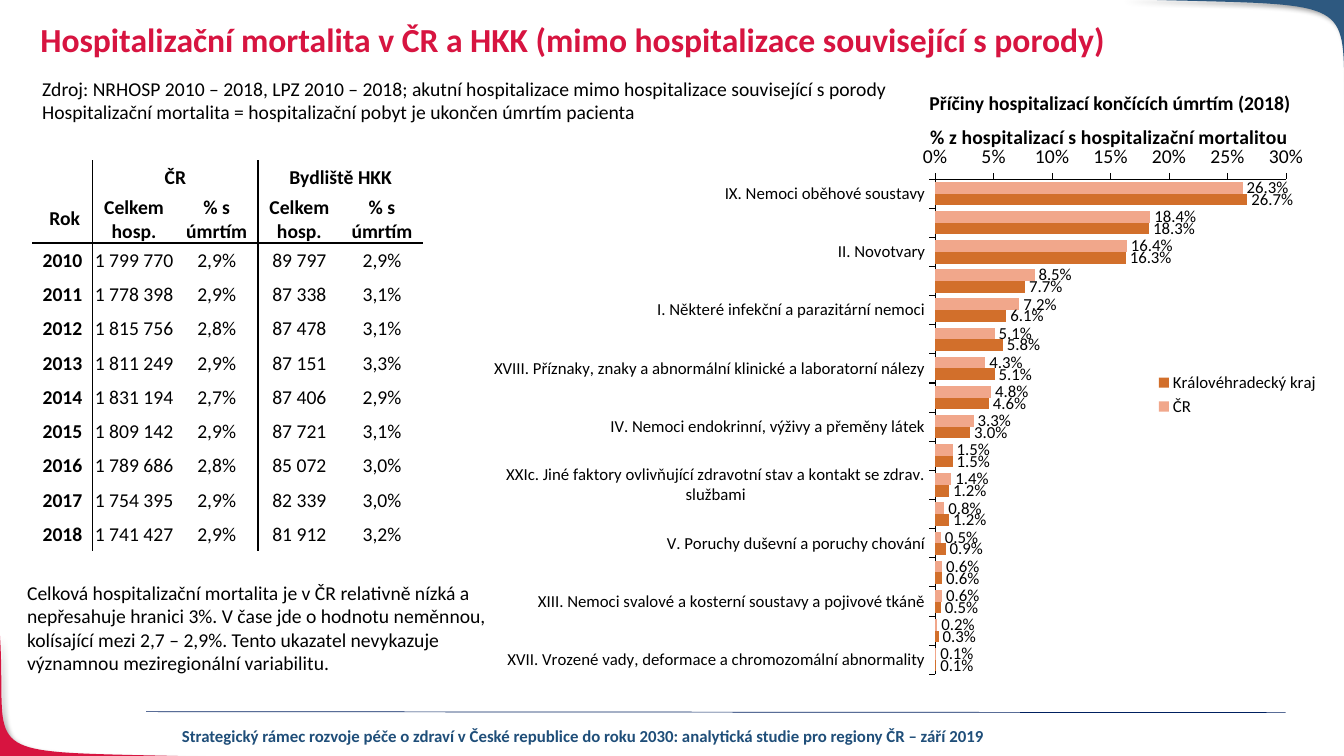
"""Build the slide on hospital mortality in the Czech Republic and the HKK region."""
import lxml.etree
import pptx
import pptx.chart.data
import pptx.dml.color
import pptx.enum.chart
import pptx.enum.shapes
import pptx.enum.text
import pptx.oxml
import pptx.oxml.ns
import pptx.util

Inches = pptx.util.Inches
Pt = pptx.util.Pt
RGBColor = pptx.dml.color.RGBColor
ALIGN = pptx.enum.text.PP_ALIGN
qn = pptx.oxml.ns.qn

BLACK = RGBColor(0x00, 0x00, 0x00)
RED = RGBColor(0xD7, 0x14, 0x40)
BLUE = RGBColor(0x2E, 0x59, 0x80)
NAVY = RGBColor(0x00, 0x20, 0x60)
FOOTER_BLUE = RGBColor(0x1F, 0x4E, 0x79)
SALMON = RGBColor(0xF1, 0xA7, 0x8B)
ORANGE = RGBColor(0xD2, 0x6F, 0x2B)
NAMESPACE = 'xmlns:a="http://schemas.openxmlformats.org/drawingml/2006/main"'


def set_font(font, size, color=BLACK, bold=False):
    font.name = "Calibri"
    font.size = Pt(size)
    font.bold = bold
    font.color.rgb = color


def write(frame, lines, size, color=BLACK, bold=False, align=ALIGN.LEFT):
    frame.word_wrap = True
    for index, line in enumerate(lines):
        paragraph = frame.add_paragraph() if index else frame.paragraphs[0]
        paragraph.alignment = align
        run = paragraph.add_run()
        run.text = line
        set_font(run.font, size, color, bold)


presentation = pptx.Presentation()
presentation.slide_width = Inches(13.33)
presentation.slide_height = Inches(7.5)
slide = presentation.slides.add_slide(presentation.slide_layouts[5])
shapes = slide.shapes

# Each corner: colour, four Bézier points, then the remaining outline points
corners = [
    (RED, [(2.13, 7.51), (-0.34, 7.44), (0.08, 7.59), (0, 6.3)], (-0.01, 7.51)),
    (BLUE, [(11.11, -0.01), (13.7, 0.07), (13.26, -0.1), (13.35, 1.42)], (13.35, -0.01)),
]
STEPS = 40
for color, curve, corner in corners:
    points = []
    for step in range(STEPS + 1):
        t = step / STEPS
        weights = [(1 - t) ** 3, 3 * t * (1 - t) ** 2, 3 * t ** 2 * (1 - t), t ** 3]
        points.append(tuple(
            Inches(sum(weight * point[axis] for weight, point in zip(weights, curve)))
            for axis in (0, 1)))
    points.append((Inches(corner[0]), Inches(corner[1])))
    builder = shapes.build_freeform(*points[0])
    builder.add_line_segments(points[1:], close=True)
    shape = builder.convert_to_shape()
    shape.fill.solid()
    shape.fill.fore_color.rgb = color
    shape.line.fill.background()
    shape.shadow.inherit = False
    shape._element.spPr.find(qn("a:effectLst")).append(pptx.oxml.parse_xml(
        f'<a:outerShdw {NAMESPACE} blurRad="{Pt(4)}" dist="{Pt(3)}" dir="2700000">'
        '<a:srgbClr val="000000"><a:alpha val="40000"/></a:srgbClr></a:outerShdw>'))

footer_line = shapes.add_connector(
    pptx.enum.shapes.MSO_CONNECTOR.STRAIGHT,
    Inches(1.45), Inches(7.06), Inches(12.75), Inches(7.07))
footer_line.line.color.rgb = NAVY
footer_line.line.width = Pt(0.5)
lxml.etree.SubElement(footer_line._element.spPr, qn("a:effectLst"))

title = shapes.title
title.left, title.top = Inches(0.3), Inches(0.18)
title.width, title.height = Inches(12.26), Inches(0.69)
title.text_frame.vertical_anchor = pptx.enum.text.MSO_ANCHOR.TOP
title.text_frame.auto_size = pptx.enum.text.MSO_AUTO_SIZE.NONE
write(title.text_frame,
      ["Hospitalizační mortalita v ČR a HKK (mimo hospitalizace související s porody)"],
      24, RED, True)
title.text_frame.paragraphs[0].line_spacing = 0.9

text_boxes = [
    ((1.68, 7.15, 8.21, 0.3),
     ["Strategický rámec rozvoje péče o zdraví v České republice do roku 2030: "
      "analytická studie pro regiony ČR – září 2019"],
     12, FOOTER_BLUE, True, ALIGN.CENTER),
    ((0.32, 0.71, 8.72, 0.57),
     ["Zdroj: NRHOSP 2010 – 2018, LPZ 2010 – 2018; akutní hospitalizace mimo "
      "hospitalizace související s porody",
      "Hospitalizační mortalita = hospitalizační pobyt je ukončen úmrtím pacienta"],
     14, BLACK, False, ALIGN.LEFT),
    ((0.17, 5.71, 5.1, 1.04),
     ["Celková hospitalizační mortalita je v ČR relativně nízká a nepřesahuje hranici 3%. "
      "V čase jde o hodnotu neměnnou, kolísající mezi 2,7 – 2,9%. Tento ukazatel "
      "nevykazuje významnou meziregionální variabilitu."],
     14, BLACK, False, ALIGN.LEFT),
    ((9.06, 0.85, 3.9, 0.34), ["Příčiny hospitalizací končících úmrtím (2018)"],
     14, BLACK, True, ALIGN.CENTER),
]
for box, *content in text_boxes:
    write(shapes.add_textbox(*map(Inches, box)).text_frame, *content)

rows = [
    ("", "ČR", "", "Bydliště HKK", ""),
    (" Rok", "Celkem hosp.", "% s úmrtím", "Celkem hosp.", "% s úmrtím"),
    ("2010", "1 799 770", "2,9%", "89 797", "2,9%"),
    ("2011", "1 778 398", "2,9%", "87 338", "3,1%"),
    ("2012", "1 815 756", "2,8%", "87 478", "3,1%"),
    ("2013", "1 811 249", "2,9%", "87 151", "3,3%"),
    ("2014", "1 831 194", "2,7%", "87 406", "2,9%"),
    ("2015", "1 809 142", "2,9%", "87 721", "3,1%"),
    ("2016", "1 789 686", "2,8%", "85 072", "3,0%"),
    ("2017", "1 754 395", "2,9%", "82 339", "3,0%"),
    ("2018", "1 741 427", "2,9%", "81 912", "3,2%"),
]
table = shapes.add_table(len(rows), 5, Inches(0.32), Inches(1.59),
                         Inches(3.89), Inches(3.91)).table
table.first_row = table.horz_banding = False
for index, column in enumerate(table.columns):
    column.width = Inches(0.82 if index else 0.6)
for row in table.rows:
    row.height = Inches(0.34)
table.rows[1].height = Inches(0.48)
for first_column in (1, 3):
    table.cell(0, first_column).merge(table.cell(0, first_column + 1))
for row_index, row in enumerate(rows):
    for column_index, value in enumerate(row):
        cell = table.cell(row_index, column_index)
        cell.margin_left = cell.margin_right = cell.margin_top = Inches(0.01)
        cell.margin_bottom = 0
        cell.vertical_anchor = pptx.enum.text.MSO_ANCHOR.MIDDLE
        if value:
            write(cell.text_frame, [value], 14, BLACK,
                  row_index < 2 or column_index == 0, ALIGN.CENTER)
        borders = {
            "lnL": column_index in (1, 3),
            "lnR": column_index in (0, 2),
            "lnT": row_index == 2,
            "lnB": row_index == 1,
        }
        for tag, visible in borders.items():
            fill = ('<a:solidFill><a:srgbClr val="000000"/></a:solidFill>'
                    if visible else "<a:noFill/>")
            cell._tc.get_or_add_tcPr().append(pptx.oxml.parse_xml(
                f'<a:{tag} {NAMESPACE} w="{Pt(1)}">{fill}</a:{tag}>'))
        cell.fill.background()

causes = [
    ("IX. Nemoci oběhové soustavy", 0.263, 0.267),
    ("X. Nemoci dýchací soustavy", 0.184, 0.183),
    ("II. Novotvary", 0.164, 0.163),
    ("XI. Nemoci trávicí soustavy", 0.085, 0.077),
    ("I. Některé infekční a parazitární nemoci", 0.072, 0.061),
    ("XIX. Poranění, otravy a některé jiné následky vnějších příčin", 0.051, 0.058),
    ("XVIII. Příznaky, znaky a abnormální klinické a laboratorní nálezy", 0.043, 0.051),
    ("XIV. Nemoci močové a pohlavní soustavy", 0.048, 0.046),
    ("IV. Nemoci endokrinní, výživy a přeměny látek", 0.033, 0.03),
    ("VI. Nemoci nervové soustavy", 0.015, 0.015),
    ("XXIc. Jiné faktory ovlivňující zdravotní stav a kontakt se zdrav. službami", 0.014, 0.012),
    ("III. Nemoci krve a krvetvorných orgánů, poruchy mechanismu imunity", 0.008, 0.012),
    ("V. Poruchy duševní a poruchy chování", 0.005, 0.009),
    ("XII. Nemoci kůže a podkožního vaziva", 0.006, 0.006),
    ("XIII. Nemoci svalové a kosterní soustavy a pojivové tkáně", 0.006, 0.005),
    ("XVI. Některé stavy vzniklé v perinatálním období", 0.002, 0.003),
    ("XVII. Vrozené vady, deformace a chromozomální abnormality", 0.001, 0.001),
]
names, country_values, region_values = zip(*causes)
data = pptx.chart.data.CategoryChartData(number_format="0.0%")
data.categories = names
data.add_series("ČR", country_values)
data.add_series("Královéhradecký kraj", region_values)
chart = shapes.add_chart(pptx.enum.chart.XL_CHART_TYPE.BAR_CLUSTERED, Inches(4.68),
                         Inches(1.01), Inches(8.51), Inches(5.81), data).chart
set_font(chart.font, 10)
chart.has_title = False
chart.has_legend = True
chart.legend.position = pptx.enum.chart.XL_LEGEND_POSITION.RIGHT
chart.legend.include_in_layout = False
set_font(chart.legend.font, 12)

plot = chart.plots[0]
plot.gap_width = 50
plot.vary_by_categories = False
for series, color in zip(plot.series, (SALMON, ORANGE)):
    series.format.fill.solid()
    series.format.fill.fore_color.rgb = color
    labels = series.data_labels
    labels.show_value = True
    labels.position = pptx.enum.chart.XL_LABEL_POSITION.OUTSIDE_END
    labels.number_format = "0.0%"
    labels.number_format_is_linked = False
    set_font(labels.font, 12)

value_axis = chart.value_axis
for axis, size in ((chart.category_axis, 12), (value_axis, 14)):
    axis.has_major_gridlines = False
    axis.major_tick_mark = pptx.enum.chart.XL_TICK_MARK.OUTSIDE
    axis.format.line.color.rgb = BLACK
    axis.format.line.width = Pt(0.75)
    set_font(axis.tick_labels.font, size)
chart.category_axis.reverse_order = True
value_axis.minimum_scale, value_axis.maximum_scale, value_axis.major_unit = 0, 0.3, 0.05
value_axis.tick_labels.number_format = "0%"
value_axis.tick_labels.number_format_is_linked = False
write(value_axis.axis_title.text_frame,
      ["% z hospitalizací s hospitalizační mortalitou"], 14, BLACK, True, ALIGN.CENTER)

plot_area = chart._chartSpace.chart.plotArea
layouts = [
    (plot_area, 0, {"layoutTarget": "inner", "xMode": "edge", "yMode": "edge",
                    "x": 0.54, "y": 0.132, "w": 0.409, "h": 0.846}),
    (value_axis.axis_title._element, 1, {"xMode": "edge", "yMode": "edge",
                                         "x": 0.53, "y": 0.03}),
]
for parent, position, settings in layouts:
    for old_layout in parent.findall(qn("c:layout")):
        parent.remove(old_layout)
    layout = lxml.etree.Element(qn("c:layout"))
    manual = lxml.etree.SubElement(layout, qn("c:manualLayout"))
    for tag, value in settings.items():
        lxml.etree.SubElement(manual, qn(f"c:{tag}")).set("val", str(value))
    parent.insert(position, layout)

presentation.save("out.pptx")
